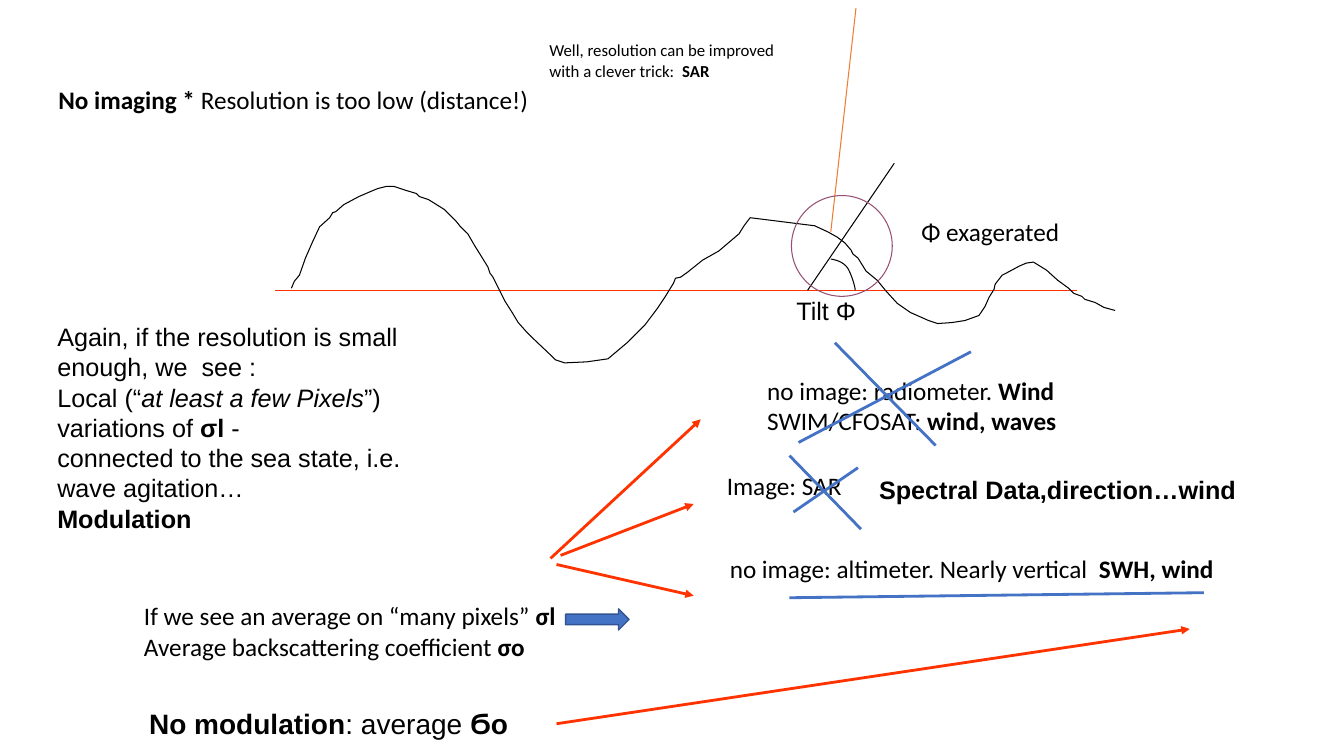
"""Build a slide on sea-surface tilt, modulation and radar imaging."""
from lxml.etree import SubElement
from pptx import Presentation
from pptx.dml.color import RGBColor
from pptx.enum.shapes import MSO_CONNECTOR as Link, MSO_SHAPE as Preset
from pptx.enum.text import MSO_AUTO_SIZE as AutoSize
from pptx.oxml.ns import qn
from pptx.util import Inches, Pt

COLORS = {
    "black": "000000", "red": "FF3300", "blue": "4472C4",
    "navy": "325491", "orange": "ED7D31", "plum": "954F72",
}


class TiltSlide:
    def __init__(self, slide):
        self.shapes = slide.shapes

    def color(self, name):
        return RGBColor.from_string(COLORS[name])

    def outline(self, shape, color, width):
        shape.line.color.rgb = self.color(color)
        shape.line.width = Pt(width)

    def line(self, start, end, color="black", width=0.75, arrow=False):
        x1, y1, x2, y2 = (Inches(value) for value in (*start, *end))
        link = self.shapes.add_connector(Link.STRAIGHT, x1, y1, x2, y2)
        self.outline(link, color, width)
        if arrow:
            SubElement(link.line._get_or_add_ln(), qn("a:tailEnd"), type="triangle")
        SubElement(link._element.spPr, qn("a:effectLst"))

    def curve(self, points):
        first, *rest = [(Inches(x), Inches(y)) for x, y in points]
        builder = self.shapes.build_freeform(*first, scale=1.0)
        builder.add_line_segments(rest, close=False)
        shape = builder.convert_to_shape()
        shape.shadow.inherit = False
        shape.fill.background()
        self.outline(shape, "black", 0.75)

    def preset(self, kind, area, color, width, fill=None):
        shape = self.shapes.add_shape(kind, *(Inches(value) for value in area))
        shape.shadow.inherit = False
        if fill:
            shape.fill.solid()
            shape.fill.fore_color.rgb = self.color(fill)
        else:
            shape.fill.background()
        self.outline(shape, color, width)

    def text(self, area, lines, font="Calibri", size=18, wrap=False):
        box = self.shapes.add_textbox(*(Inches(value) for value in area))
        frame = box.text_frame
        frame.word_wrap = wrap
        frame.auto_size = AutoSize.SHAPE_TO_FIT_TEXT
        for index, spans in enumerate(lines):
            para = frame.add_paragraph() if index else frame.paragraphs[0]
            for words, style in spans:
                span = para.add_run()
                span.text = words
                span.font.name = font
                span.font.size = Pt(size)
                span.font.bold = style == "bold"
                span.font.italic = style == "italic"
                span.font.color.rgb = self.color("black")


def bezier(start, control1, control2, end, steps=12):
    corners = list(zip(start, control1, control2, end))
    for step in range(1, steps + 1):
        t = step / steps
        u = 1 - t
        yield tuple(u**3 * a + 3 * u * u * t * b + 3 * u * t * t * c + t**3 * d
                    for a, b, c, d in corners)


WAVE = [
    (2.89, 2.86), (2.92, 2.79), (2.97, 2.73), (3.03, 2.56), (3.1, 2.4), (3.17, 2.25),
    (3.27, 2.16), (3.3, 2.11), (3.33, 2.1), (3.41, 2.03), (3.56, 1.95), (3.7, 1.89),
    (3.75, 1.87), (3.83, 1.85), (3.91, 1.85), (4.03, 1.89), (4.13, 1.92), (4.16, 1.95),
    (4.25, 1.98), (4.33, 2.03), (4.41, 2.08), (4.52, 2.19), (4.56, 2.24), (4.64, 2.32),
    (4.71, 2.44), (4.76, 2.52), (4.84, 2.65), (4.86, 2.71), (4.89, 2.75), (4.95, 2.87),
    (5.01, 2.99), (5.08, 3.1), (5.14, 3.2), (5.22, 3.29), (5.29, 3.36), (5.48, 3.54),
    (5.51, 3.57), (5.6, 3.6), (5.82, 3.59), (6.03, 3.56), (6.22, 3.4), (6.31, 3.31),
    (6.4, 3.22), (6.52, 3.06), (6.6, 2.94), (6.68, 2.81), (6.7, 2.76), (6.75, 2.75),
    (6.82, 2.7), (6.97, 2.58), (7.13, 2.49), (7.33, 2.32), (7.38, 2.24), (7.44, 2.16),
    (8.08, 2.24), (8.21, 2.3), (8.3, 2.35), (8.38, 2.41), (8.44, 2.48), (8.46, 2.52),
    (8.51, 2.56), (8.59, 2.69), (8.7, 2.78), (8.79, 2.89), (8.9, 3.01), (9.03, 3.1),
    (9.21, 3.18), (9.3, 3.21), (9.44, 3.2), (9.57, 3.18), (9.71, 3.13), (9.77, 3.04),
    (9.81, 2.95), (9.86, 2.87), (9.87, 2.82), (9.94, 2.73), (9.98, 2.71), (10.11, 2.64),
    (10.18, 2.61), (10.25, 2.6), (10.38, 2.68), (10.49, 2.78), (10.6, 2.86),
    (10.65, 2.91), (10.73, 2.94), (10.76, 2.97), (10.86, 3), (10.95, 3.05), (11.06, 3.08),
]
TILT_ARC = [
    (8.24, 2.57),
    *bezier((8.24, 2.57), (8.3, 2.58), (8.36, 2.6), (8.4, 2.65)),
    *bezier((8.4, 2.65), (8.44, 2.7), (8.49, 2.87), (8.48, 2.88)),
]
ARROWS = [
    ((5.52, 5.6), (6.88, 5.91)), ((5.56, 5.51), (6.88, 5)),
    ((5.46, 5.54), (6.95, 4.16)), ((5.52, 7.18), (11.8, 6.24)),
]
MARKS = [
    ((8.28, 3.4), (9.28, 4.42)), ((9.63, 3.49), (7.92, 4.39)),
    ((7.83, 4.52), (8.54, 5.25)), ((7.87, 5.08), (8.51, 4.64)),
    ((7.83, 5.93), (11.94, 5.88)),
]
CALIBRI_NOTES = [
    ((9.04, 2.1, 1.7, 0.4), [[("Φ exagerated", "")]]),
    ((7.11, 4.62, 1.35, 0.4), [[("Image: SAR", "")]]),
    ((7.14, 5.44, 5.06, 0.74),
     [[("no image: altimeter. Nearly vertical  ", ""), ("SWH, wind", "bold")]]),
    ((7.51, 3.67, 3.15, 0.71),
     [[("no image: radiometer. ", ""), ("Wind", "bold")],
      [("SWIM/CFOSAT: ", ""), ("wind, waves", "bold")]]),
    ((0.48, 0.79, 4.97, 0.71),
     [[("No imaging * ", "bold"), ("Resolution is too low (distance!)", "")]]),
]
MODULATION = [
    [("Again, if the resolution is small enough, we  see :", "")],
    [("Local (“", ""), ("at least a few Pixels", "italic"), ("”)", "")],
    [("variations of ", ""), ("σl", "bold"), (" -", "")],
    [("connected to the sea state, i.e. wave agitation…", "")],
    [("Modulation", "bold")],
]
AVERAGE = [
    [("If we see an average on “many pixels” ", ""), ("σl", "bold")],
    [("Average backscattering coefficient ", ""), ("σo", "bold")],
]


def main():
    deck = Presentation()
    deck.slide_width, deck.slide_height = Inches(13.33), Inches(7.5)
    page = TiltSlide(deck.slides.add_slide(deck.slide_layouts[6]))

    page.line((2.73, 2.88), (10.68, 2.88), "red")
    page.curve(WAVE)
    page.line((8.87, 1.62), (8.01, 2.88))
    page.curve(TILT_ARC)
    page.line((8.24, 2.3), (8.49, 0.08), "orange")
    page.preset(Preset.OVAL, (7.85, 1.94, 1, 1), "plum", 0.75)

    page.text((7.8, 2.88, 0.8, 0.4), [[("Tilt Φ", "")]], "Arial")
    page.text((0.47, 3.14, 3.84, 2.22), MODULATION, "Arial", wrap=True)
    page.text((8.62, 4.66, 3.9, 0.4), [[("Spectral Data,direction…wind", "bold")]],
              "Arial", wrap=True)
    for area, lines in CALIBRI_NOTES:
        page.text(area, lines)
    page.text((1.38, 6.96, 3.79, 0.44),
              [[("No modulation", "bold"), (": average ", ""), ("Ϭo", "bold")]],
              "Arial", 20)
    page.text((5.35, 0.35, 2.46, 0.5),
              [[("Well, resolution can be improved", "")],
               [("with a clever trick:  ", ""), ("SAR", "bold")]], size=12)
    page.text((1.33, 5.91, 6.67, 0.71), AVERAGE, wrap=True)

    for start, end in ARROWS:
        page.line(start, end, "red", 2, arrow=True)
    for start, end in MARKS:
        page.line(start, end, "blue", 2)
    page.preset(Preset.RIGHT_ARROW, (5.61, 6.04, 0.63, 0.21), "navy", 1, "blue")

    deck.save("out.pptx")


if __name__ == "__main__":
    main()
